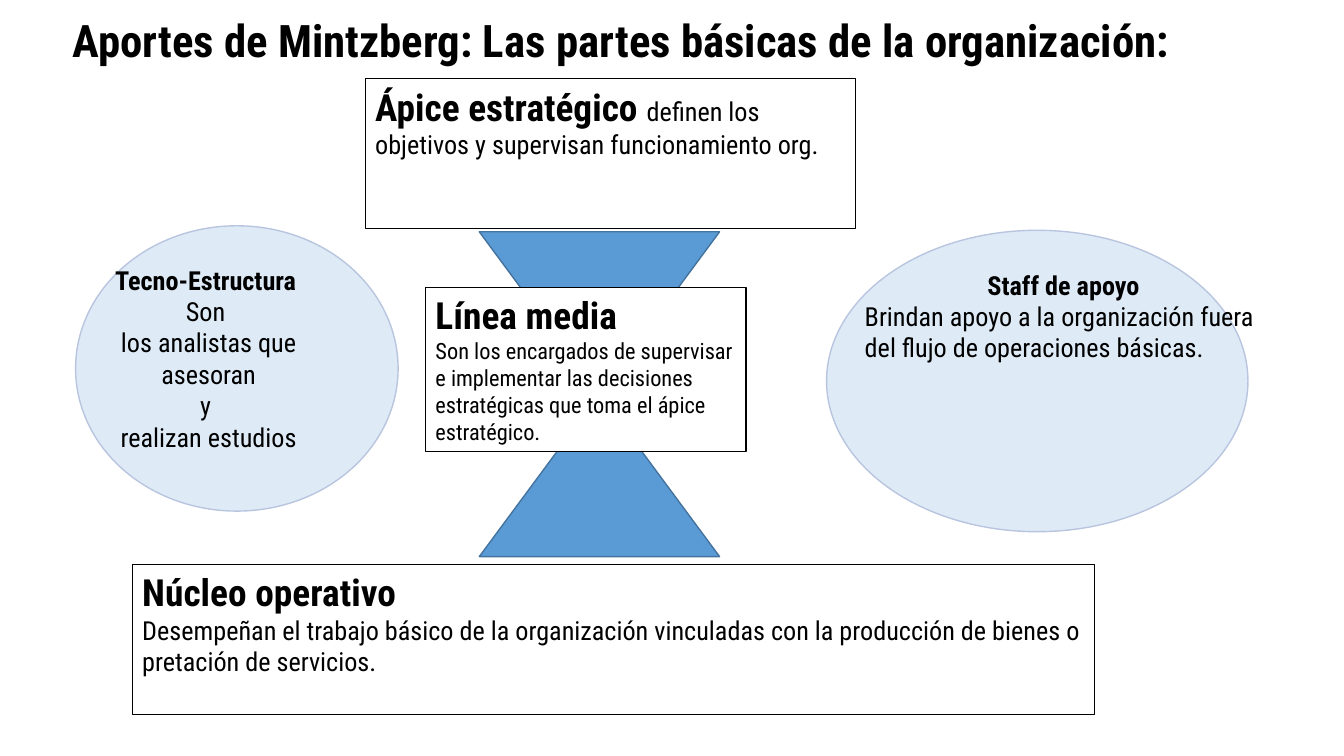
from dataclasses import dataclass

from pptx import Presentation
from pptx.dml.color import RGBColor
from pptx.enum.shapes import MSO_SHAPE
from pptx.enum.text import MSO_ANCHOR, MSO_AUTO_SIZE, PP_ALIGN
from pptx.util import Pt


@dataclass(frozen=True)
class Theme:
    font: str = "Roboto Condensed"
    ink: str = "000000"
    paper: str = "FFFFFF"
    funnel: str = "5B9BD5"
    funnel_edge: str = "43739E"
    oval: str = "DEEBF7"
    oval_edge: str = "B9C5DF"
    title: float = 32
    heading: float = 26.7
    body: float = 18.7
    small: float = 16


class OrganizationSlide:
    def __init__(self, page, theme):
        self.page = page
        self.theme = theme

    def fill_text(self, shape, paragraphs):
        frame = shape.text_frame
        frame.word_wrap = True
        frame.auto_size = MSO_AUTO_SIZE.NONE
        frame.vertical_anchor = MSO_ANCHOR.TOP
        for index, (align, spans) in enumerate(paragraphs):
            para = frame.add_paragraph() if index else frame.paragraphs[0]
            para.alignment = align
            for words, size, bold in spans:
                span = para.add_run()
                span.text = words
                span.font.name = self.theme.font
                span.font.size = Pt(size)
                span.font.bold = bold
                span.font.color.rgb = RGBColor.from_string(self.theme.ink)

    def title(self, words, left, top, width, height):
        title = self.page.shapes.title
        title.left, title.top = Pt(left), Pt(top)
        title.width, title.height = Pt(width), Pt(height)
        self.fill_text(title, [(PP_ALIGN.LEFT, [(words, self.theme.title, True)])])

    def shape(self, kind, bounds, fill, edge, weight=1):
        shape = self.page.shapes.add_shape(kind, *map(Pt, bounds))
        shape.shadow.inherit = False
        if fill:
            shape.fill.solid()
            shape.fill.fore_color.rgb = RGBColor.from_string(fill)
        else:
            shape.fill.background()
        shape.line.color.rgb = RGBColor.from_string(edge)
        shape.line.width = Pt(weight)
        return shape

    def oval(self, *bounds):
        self.shape(MSO_SHAPE.OVAL, bounds, self.theme.oval, self.theme.oval_edge)

    def funnel(self, *bounds):
        self.shape(MSO_SHAPE.FLOWCHART_COLLATE, bounds,
                   self.theme.funnel, self.theme.funnel_edge)

    def panel(self, bounds, paragraphs, fill=None, weight=0.75):
        box = self.shape(MSO_SHAPE.RECTANGLE, bounds, fill, self.theme.ink, weight)
        self.fill_text(box, [(PP_ALIGN.LEFT, spans) for spans in paragraphs])

    def label(self, bounds, paragraphs):
        box = self.page.shapes.add_textbox(*map(Pt, bounds))
        self.fill_text(box, paragraphs)


def main():
    deck = Presentation()
    deck.slide_width, deck.slide_height = Pt(960), Pt(540)
    theme = Theme()
    page = deck.slides.add_slide(deck.slide_layouts[5])
    slide = OrganizationSlide(page, theme)

    slide.title("Aportes de Mintzberg: Las partes básicas de la organización:",
                44.6, 5.8, 885.6, 85)
    slide.funnel(342.4, 165.6, 171.6, 232)
    slide.oval(54, 161.3, 230.4, 203.8)
    slide.panel((94.5, 403.2, 687.6, 107.3), [
        [("Núcleo operativo", theme.heading, True)],
        [("Desempeñan el trabajo básico de la organización vinculadas con "
          "la producción de bienes o pretación de servicios.", theme.body, False)],
    ])
    slide.panel((260.9, 56.2, 349.9, 107.3), [
        [("Ápice estratégico ", theme.heading, True),
         ("definen los objetivos y supervisan funcionamiento org.", theme.body, False)],
    ])
    analysts = ["Son ", "los analistas que", " asesoran ", "y ", "realizan estudios"]
    slide.label((0, 185, 298.1, 165.6), [
        (PP_ALIGN.CENTER, [("Tecno-Estructura ", theme.body, True)]),
        *[(PP_ALIGN.CENTER, [(words, theme.body, False)]) for words in analysts],
    ])
    slide.oval(590.4, 164.5, 301, 215.3)
    slide.panel((304, 205.2, 229, 117.4), [
        [("Línea media", theme.heading, True)],
        [("Son los encargados de supervisar e implementar las decisiones "
          "estratégicas que toma el ápice estratégico.", theme.small, False)],
    ], fill=theme.paper, weight=1)
    slide.label((610.6, 188.6, 298.1, 97.9), [
        (PP_ALIGN.CENTER, [("Staff de apoyo", theme.body, True)]),
        (PP_ALIGN.LEFT, [("Brindan apoyo a la organización fuera del flujo de "
                          "operaciones básicas.", theme.body, False)]),
    ])
    deck.save("out.pptx")


if __name__ == "__main__":
    main()
